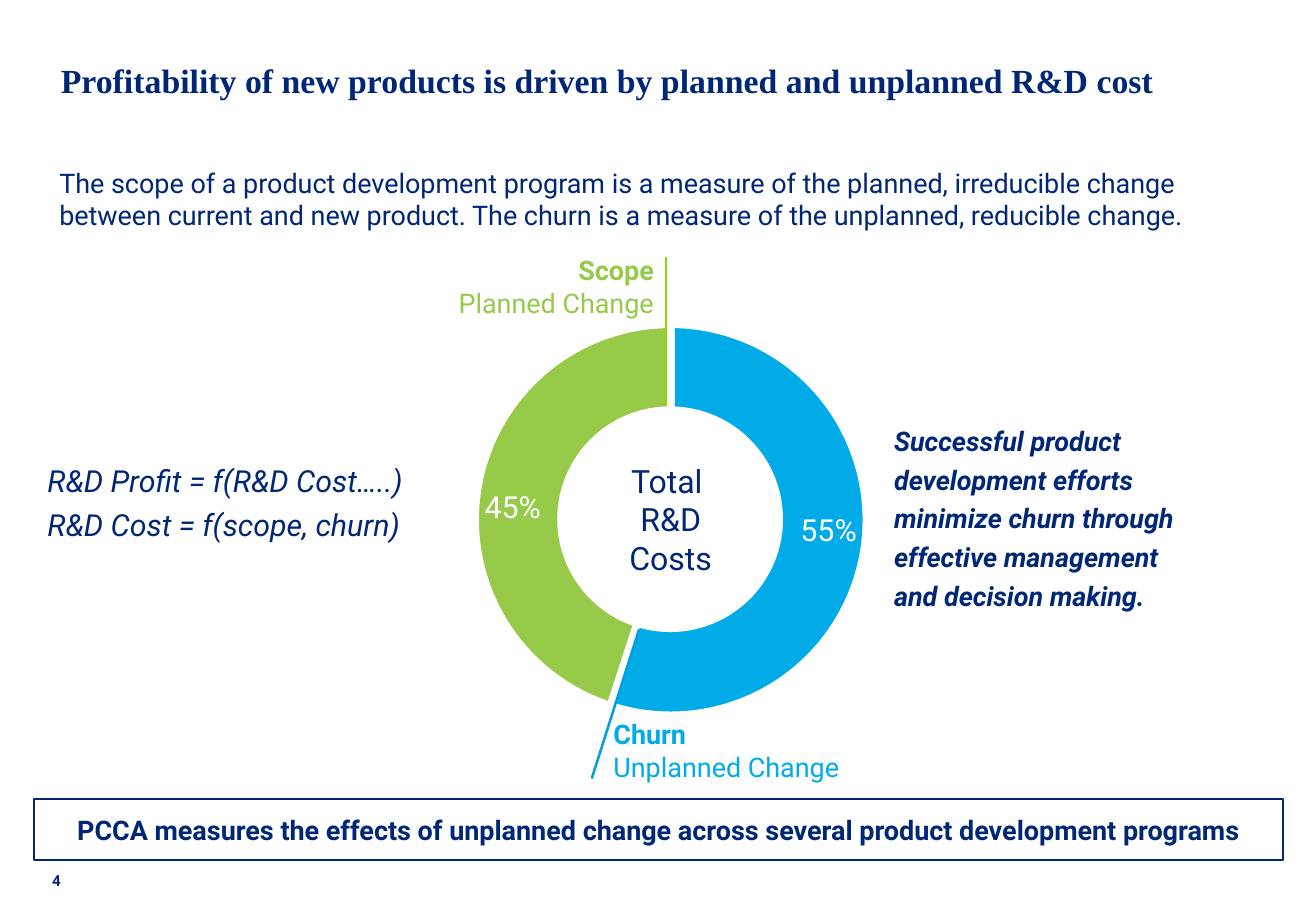
import pptx
import pptx.chart.data
import pptx.dml.color
import pptx.enum.chart
import pptx.enum.shapes
import pptx.enum.text
import pptx.util
from lxml import etree
from pptx.util import Inches, Pt

NAVY, GREEN, BLUE, WHITE = "002776", "98CA4A", "00ABE8", "FFFFFF"
ALIGN = pptx.enum.text.PP_ALIGN
ANCHOR = pptx.enum.text.MSO_ANCHOR
AUTO_SIZE = pptx.enum.text.MSO_AUTO_SIZE
SHAPE = pptx.enum.shapes.MSO_SHAPE


def color(hex_value):
    return pptx.dml.color.RGBColor.from_string(hex_value)


def write(shape, text, size, align=ALIGN.LEFT, bold=False, italic=False,
          font_name="Roboto", spacing=1.0, inset=True, anchor=ANCHOR.TOP):
    frame = shape.text_frame
    frame.word_wrap = True
    frame.auto_size = AUTO_SIZE.NONE
    frame.vertical_anchor = anchor
    if not inset:
        frame.margin_left = frame.margin_right = 0
        frame.margin_top = frame.margin_bottom = 0
    paragraph = frame.paragraphs[0]
    paragraph.text = text
    paragraph.alignment = align
    paragraph.line_spacing = spacing
    paragraph.space_before = Pt(0)
    paragraph.font.name = font_name
    paragraph.font.size = Pt(size)
    paragraph.font.bold = bold
    paragraph.font.italic = italic
    paragraph.font.color.rgb = color(NAVY)
    return paragraph


presentation = pptx.Presentation()
presentation.slide_width = Inches(10.83)
presentation.slide_height = Inches(7.5)
slide = presentation.slides.add_slide(presentation.slide_layouts[1])
shapes = slide.shapes

title = shapes.title
title.left, title.top, title.width, title.height = map(Inches, (0.5, 0.47, 9.83, 0.37))
write(title, "Profitability of new products is driven by planned and unplanned R&D cost", 20,
      bold=True, font_name="Times New Roman", inset=False, anchor=ANCHOR.MIDDLE)

formulas = slide.placeholders[1]
formulas.left, formulas.top, formulas.width, formulas.height = map(Inches, (0.39, 3.58, 3.25, 1.05))
formula_lines = write(formulas, "R&D Profit = f(R&D Cost…..)\vR&D Cost = f(scope, churn)", 18,
                      italic=True, spacing=1.2, inset=False, anchor=ANCHOR.MIDDLE)
formula_lines.space_after = Pt(6)
formula_properties = formula_lines._p.get_or_add_pPr()
formula_properties.set("marL", "0")
formula_properties.set("indent", "0")
no_bullet = etree.Element(pptx.oxml.ns.qn("a:buNone"))
formula_properties.find(pptx.oxml.ns.qn("a:defRPr")).addprevious(no_bullet)

cost_data = pptx.chart.data.CategoryChartData()
cost_data.categories = ["1", "2"]
cost_data.add_series("Series 1", (55, 45))
cost_chart = shapes.add_chart(
    pptx.enum.chart.XL_CHART_TYPE.PIE,
    Inches(3.77), Inches(2.53), Inches(3.5), Inches(3.5), cost_data).chart
cost_chart.has_legend = False
cost_chart.has_title = False
cost_chart.font.name = "Roboto"
cost_chart.font.size = Pt(18)
cost_plot = cost_chart.plots[0]
for index, fill in enumerate((BLUE, GREEN)):
    slice_format = cost_plot.series[0].points[index].format
    slice_format.fill.solid()
    slice_format.fill.fore_color.rgb = color(fill)
    slice_format.line.color.rgb = color(WHITE)
    slice_format.line.width = Pt(4.5)
cost_plot.has_data_labels = True
percentages = cost_plot.data_labels
percentages.show_percentage = True
percentages.show_value = False
percentages.number_format = "0%"
percentages.number_format_is_linked = False
percentages.position = pptx.enum.chart.XL_LABEL_POSITION.INSIDE_END
percentages.font.name = "Roboto"
percentages.font.size = Pt(18)
percentages.font.color.rgb = color(WHITE)

plot_area = cost_chart._chartSpace.chart.plotArea
for old_layout in plot_area.findall(pptx.oxml.ns.qn("c:layout")):
    plot_area.remove(old_layout)
layout = etree.Element(pptx.oxml.ns.qn("c:layout"))
plot_area.insert(0, layout)
manual_layout = etree.SubElement(layout, pptx.oxml.ns.qn("c:manualLayout"))
for setting, value in (("layoutTarget", "inner"), ("xMode", "edge"), ("yMode", "edge"),
                       ("x", "0.04"), ("y", "0.04"), ("w", "0.92"), ("h", "0.92")):
    etree.SubElement(manual_layout, pptx.oxml.ns.qn("c:" + setting)).set("val", value)

ring_hole = shapes.add_shape(SHAPE.OVAL, Inches(4.6), Inches(3.36), Inches(1.83), Inches(1.83))
conclusion = shapes.add_shape(SHAPE.RECTANGLE, Inches(0.28), Inches(6.58), Inches(10.28), Inches(0.5))
for panel, outline, weight in ((ring_hole, WHITE, 2), (conclusion, NAVY, 1)):
    panel.shadow.inherit = False
    panel.fill.solid()
    panel.fill.fore_color.rgb = color(WHITE)
    panel.line.color.rgb = color(outline)
    panel.line.width = Pt(weight)
write(conclusion, "PCCA measures the effects of unplanned change across several product development programs",
      16, align=ALIGN.CENTER, bold=True, anchor=ANCHOR.MIDDLE)

for x1, y1, x2, y2, stroke in ((5.48, 3.34, 5.48, 2.12, "92D400"), (4.87, 6.41, 5.26, 5.18, "00A1DE")):
    divider = shapes.add_connector(pptx.enum.shapes.MSO_CONNECTOR.STRAIGHT,
                                   Inches(x1), Inches(y1), Inches(x2), Inches(y2))
    divider.line.color.rgb = color(stroke)
    divider.line.width = Pt(1.5)
    etree.SubElement(divider._element.spPr, pptx.oxml.ns.qn("a:effectLst"))

for heading, meaning, left, top, width, align, tint in (
        ("Scope", "Planned Change", 3.67, 2.04, 1.81, ALIGN.RIGHT, GREEN),
        ("Churn", "Unplanned Change", 4.95, 5.86, 2.1, ALIGN.LEFT, BLUE)):
    label = shapes.add_textbox(Inches(left), Inches(top), Inches(width), Inches(0.64))
    label_text = write(label, "", 16, align=align)
    label.text_frame.word_wrap = False
    label_text.font.color.rgb = color(tint)
    heading_run = label_text.add_run()
    heading_run.text = heading
    heading_run.font.bold = True
    label_text.add_line_break()
    label_text.add_run().text = meaning

total = shapes.add_textbox(Inches(4.79), Inches(3.75), Inches(1.46), Inches(1.06))
write(total, "Total \vR&D\vCosts", 19, align=ALIGN.CENTER)

definition = shapes.add_textbox(Inches(0.39), Inches(1.32), Inches(10.17), Inches(0.64))
write(definition, "The scope of a product development program is a measure of the planned, irreducible change "
      "between current and new product. The churn is a measure of the unplanned, reducible change.", 16)

page_number = shapes.add_textbox(Inches(0.43), Inches(7.17), Inches(0.2), Inches(0.16))
write(page_number, "4", 9, bold=True, spacing=Pt(11.2), inset=False)

advice = shapes.add_textbox(Inches(7.26), Inches(3.39), Inches(2.74), Inches(1.72))
write(advice, "Successful product development efforts minimize churn through effective management "
      "and decision making.", 16, bold=True, italic=True, spacing=1.2)

presentation.save("out.pptx")
